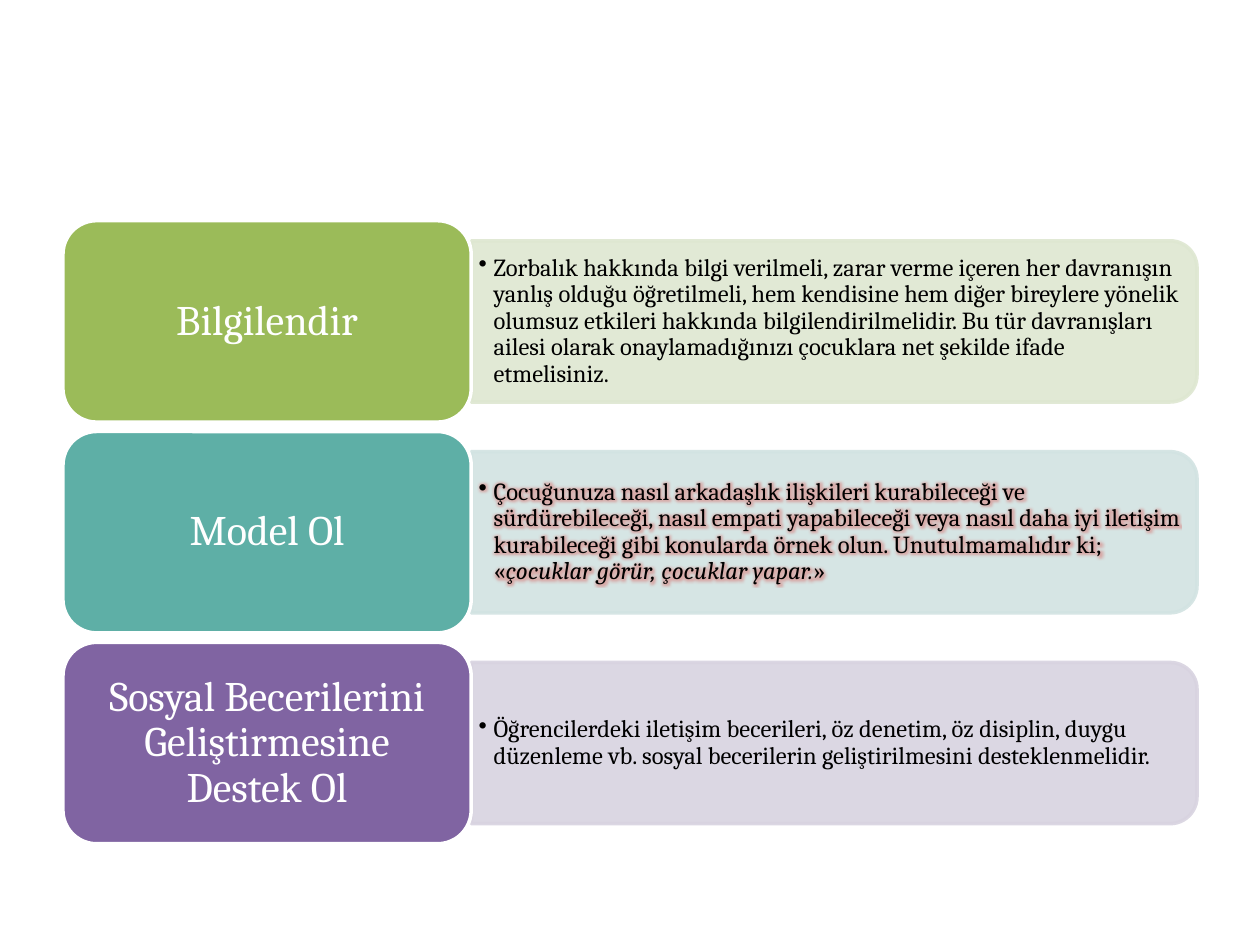
"""Build a slide with three labelled rows of advice for families about bullying."""
from lxml.etree import SubElement
from pptx import Presentation
from pptx.dml.color import RGBColor
from pptx.enum.shapes import MSO_SHAPE
from pptx.enum.text import MSO_ANCHOR, PP_ALIGN
from pptx.oxml import parse_xml
from pptx.oxml.ns import nsdecls, qn
from pptx.util import Cm, Pt

COLORS = {
    "white": "FFFFFF", "black": "000000", "glow": "D9524E",
    "green": "9BBB59", "pale green": "DEE7D1",
    "teal": "5EAFA6", "pale teal": "D2E3E2",
    "purple": "8064A2", "pale purple": "D8D3E0",
}
ROWS = [
    ("Bilgilendir", "green", False, [
        ("Zorbalık hakkında bilgi verilmeli, zarar verme içeren her davranışın yanlış olduğu "
         "öğretilmeli, hem kendisine hem diğer bireylere yönelik olumsuz etkileri hakkında "
         "bilgilendirilmelidir. Bu tür davranışları ailesi olarak onaylamadığınızı çocuklara "
         "net şekilde ifade etmelisiniz.", False)]),
    ("Model Ol", "teal", True, [
        ("Çocuğunuza nasıl arkadaşlık ilişkileri kurabileceği ve sürdürebileceği, nasıl empati "
         "yapabileceği veya nasıl daha iyi iletişim kurabileceği gibi konularda örnek olun. "
         "Unutulmamalıdır ki; «", False),
        ("çocuklar görür, çocuklar yapar.", True),
        ("»", False)]),
    ("Sosyal Becerilerini Geliştirmesine Destek Ol", "purple", False, [
        ("Öğrencilerdeki iletişim becerileri, öz denetim, öz disiplin, duygu düzenleme vb. "
         "sosyal becerilerin geliştirilmesini desteklenmelidir.", False)]),
]
LABEL_FORMAT = {"name": "Cambria", "size": Pt(24)}
ADVICE_FORMAT = {"name": "Cambria", "size": Pt(14)}
LABEL_FRAME = {"word_wrap": True, "vertical_anchor": MSO_ANCHOR.MIDDLE}
ADVICE_FRAME = {
    **LABEL_FRAME, "margin_left": Cm(0.15), "margin_right": Cm(0.15),
    "margin_top": Cm(0.08), "margin_bottom": Cm(0.08),
}
LEFT, TOP, PITCH = Cm(1.27), Cm(4.45), Cm(4.25)
LABEL_WIDTH, LABEL_HEIGHT = Cm(8.23), Cm(4.06)
PANEL_WIDTH, PANEL_HEIGHT = Cm(14.63), Cm(3.25)
ADVICE_WIDTH, ADVICE_HEIGHT = Cm(14.48), Cm(2.92)


def paint(shape, fill, line):
    shape.shadow.inherit = False
    shape.fill.solid()
    shape.fill.fore_color.rgb = RGBColor.from_string(COLORS[fill])
    shape.line.color.rgb = RGBColor.from_string(COLORS[line])
    shape.line.width = Pt(2)


def add_run(paragraph, text, color, formats):
    run = paragraph.add_run()
    run.text = text
    for name, value in formats.items():
        setattr(run.font, name, value)
    run.font.color.rgb = RGBColor.from_string(COLORS[color])
    return run


presentation = Presentation()
presentation.slide_width, presentation.slide_height = Cm(25.4), Cm(19.05)
slide = presentation.slides.add_slide(presentation.slide_layouts[6])

for index, (title, color, glowing, parts) in enumerate(ROWS):
    top = TOP + index * PITCH
    middle = top + LABEL_HEIGHT // 2
    text_left = LEFT + LABEL_WIDTH

    panel = slide.shapes.add_shape(
        MSO_SHAPE.ROUND_2_SAME_RECTANGLE,
        text_left + (PANEL_WIDTH - PANEL_HEIGHT) // 2, middle - PANEL_WIDTH // 2,
        PANEL_HEIGHT, PANEL_WIDTH)
    panel.rotation = 90
    paint(panel, f"pale {color}", f"pale {color}")
    for color_element in panel.element.spPr.iter(qn("a:srgbClr")):
        SubElement(color_element, qn("a:alpha"), val="90000")

    advice = slide.shapes.add_textbox(
        text_left, middle - ADVICE_HEIGHT // 2, ADVICE_WIDTH, ADVICE_HEIGHT)
    for name, value in ADVICE_FRAME.items():
        setattr(advice.text_frame, name, value)
    paragraph = advice.text_frame.paragraphs[0]
    paragraph.line_spacing = 0.9
    properties = paragraph._p.get_or_add_pPr()
    properties.set("marL", str(Cm(0.3)))
    properties.set("indent", str(-Cm(0.3)))
    SubElement(properties, qn("a:buChar"), char="•")
    for text, italic in parts:
        run = add_run(paragraph, text, "black", {**ADVICE_FORMAT, "italic": italic})
        if glowing:
            run.font.fill._xPr.find(qn("a:solidFill")).addnext(parse_xml(
                f'<a:effectLst {nsdecls("a")}><a:glow rad="{Pt(5)}">'
                f'<a:srgbClr val="{COLORS["glow"]}"><a:alpha val="40000"/></a:srgbClr>'
                '</a:glow></a:effectLst>'))

    label = slide.shapes.add_shape(
        MSO_SHAPE.ROUNDED_RECTANGLE, LEFT, top, LABEL_WIDTH, LABEL_HEIGHT)
    paint(label, color, "white")
    for name, value in LABEL_FRAME.items():
        setattr(label.text_frame, name, value)
    paragraph = label.text_frame.paragraphs[0]
    paragraph.alignment = PP_ALIGN.CENTER
    paragraph.line_spacing = 0.9
    add_run(paragraph, title, "white", LABEL_FORMAT)

presentation.save("out.pptx")
